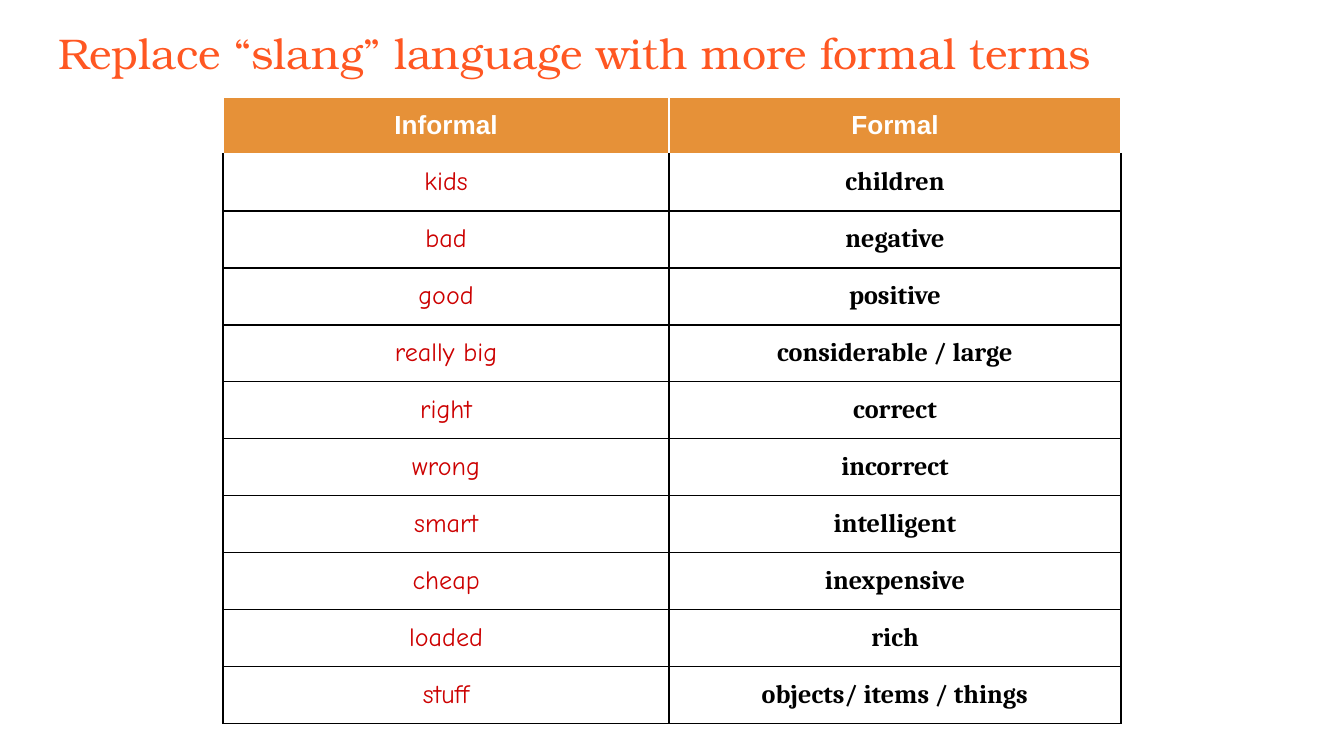
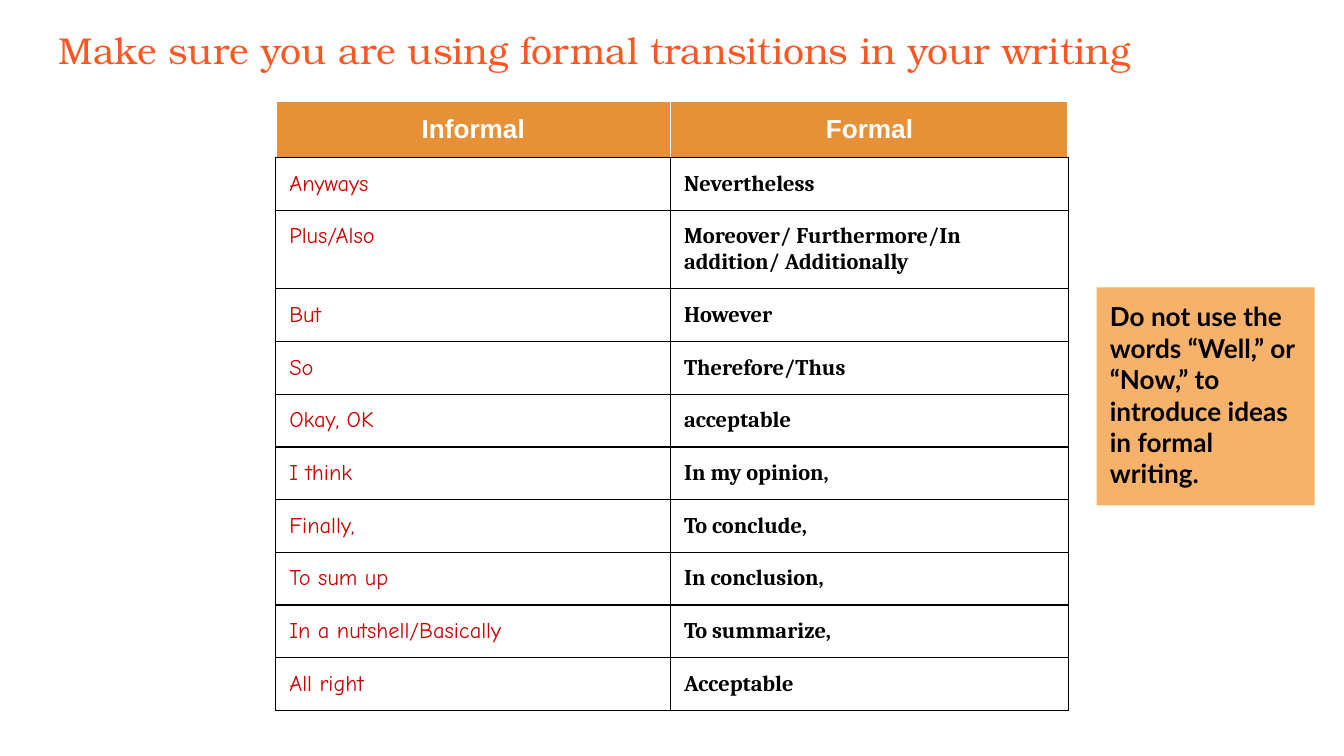
from dataclasses import dataclass

from lxml.etree import SubElement
from pptx import Presentation
from pptx.dml.color import RGBColor
from pptx.enum.shapes import MSO_SHAPE
from pptx.enum.text import MSO_ANCHOR, MSO_AUTO_SIZE, PP_ALIGN
from pptx.oxml.ns import qn
from pptx.util import Pt


@dataclass(frozen=True)
class Theme:
    # Colours
    title: str = "FF5722"
    head: str = "E69138"
    slang: str = "CC0000"
    note: str = "F6B26B"
    black: str = "000000"
    white: str = "FFFFFF"
    # Fonts
    serif: str = "TeX Gyre Bonum"
    sans: str = "Arial"
    hand: str = "Comic Neue"
    book: str = "Cambria"
    memo: str = "Lato"
    # Type sizes and insets
    large: float = 23
    medium: float = 20
    normal: float = 14
    small: float = 12
    pad: float = 7.2
    slim: float = 5


def style(item, values):
    for name, value in values.items():
        setattr(item, name, value)


def paint(fill, tone):
    fill.solid()
    fill.fore_color.rgb = RGBColor.from_string(tone)


class Deck:
    def __init__(self, theme):
        self.theme = theme
        self.show = Presentation()
        style(self.show, {"slide_width": Pt(720), "slide_height": Pt(405)})
        self.slide = None

    def page(self):
        self.slide = self.show.slides.add_slide(self.show.slide_layouts[6])
        paint(self.slide.background.fill, self.theme.white)

    def label(self, frame, text, face, size, tone, bold=False, align=PP_ALIGN.LEFT):
        para = frame.paragraphs[0]
        para.alignment = align
        run = para.add_run()
        run.text = text
        style(run.font, {"name": face, "size": Pt(size), "bold": bold})
        run.font.color.rgb = RGBColor.from_string(tone)

    def setup(self, frame, fit):
        pad = Pt(self.theme.pad)
        style(frame, {
            "word_wrap": True, "auto_size": fit, "vertical_anchor": MSO_ANCHOR.TOP,
            "margin_left": pad, "margin_right": pad,
            "margin_top": pad, "margin_bottom": pad,
        })

    def title(self, text, size, height):
        box = self.slide.shapes.add_textbox(Pt(24.5), Pt(7.2), Pt(671), Pt(height))
        self.setup(box.text_frame, MSO_AUTO_SIZE.NONE)
        self.label(box.text_frame, text, self.theme.serif, size, self.theme.title)

    def note(self, text, left, top, side):
        box = self.slide.shapes.add_shape(
            MSO_SHAPE.RECTANGLE, Pt(left), Pt(top), Pt(side), Pt(side))
        box.shadow.inherit = False
        paint(box.fill, self.theme.note)
        box.line.fill.background()
        self.setup(box.text_frame, MSO_AUTO_SIZE.SHAPE_TO_FIT_TEXT)
        self.label(box.text_frame, text, self.theme.memo, self.theme.normal,
                   self.theme.black, True)

    def edge(self, cell, lines):
        props = cell._tc.get_or_add_tcPr()
        for spot, side in enumerate("LRTB"):
            tone, width = lines[side]
            line = SubElement(props, qn(f"a:ln{side}"), w=str(Pt(width)))
            fill = SubElement(line, qn("a:solidFill"))
            SubElement(fill, qn("a:srgbClr"), val=tone)
            props.insert(spot, line)

    def table(self, pairs, left, top, widths, heights, size, align, side, rule, seam):
        """Two-column word list; seam is the line below the header."""
        look = self.theme
        rows = [("Informal", "Formal"), *pairs]
        grid = self.slide.shapes.add_table(
            len(rows), 2, Pt(left), Pt(top), Pt(sum(widths)), Pt(sum(heights))).table
        style(grid, {"first_row": False, "horz_banding": False})
        for col, width in zip(grid.columns, widths):
            col.width = Pt(width)
        for row, height in zip(grid.rows, heights):
            row.height = Pt(height)

        body = [(look.hand, size, look.slang, False), (look.book, size, look.black, True)]
        for i, words in enumerate(rows):
            for j, word in enumerate(words):
                cell = grid.cell(i, j)
                inset = side if i else look.slim
                style(cell, {
                    "margin_left": Pt(inset), "margin_right": Pt(inset),
                    "margin_top": Pt(look.pad), "margin_bottom": Pt(look.pad),
                    "vertical_anchor": MSO_ANCHOR.TOP,
                })
                if i == 0:
                    paint(cell.fill, look.head)
                    self.label(cell.text_frame, word, look.sans, look.normal,
                               look.white, True, PP_ALIGN.CENTER)
                    lines = dict.fromkeys("LRT", (look.white, 1)) | {"B": seam}
                else:
                    cell.fill.background()
                    self.label(cell.text_frame, word, *body[j], align)
                    lines = dict.fromkeys("LRTB", (look.black, rule))
                    if i == 1:
                        lines["T"] = seam
                self.edge(cell, lines)


SLANG = [
    ("kids", "children"),
    ("bad", "negative"),
    ("good", "positive"),
    ("really big", "considerable / large"),
    ("right", "correct"),
    ("wrong", "incorrect"),
    ("smart", "intelligent"),
    ("cheap", "inexpensive"),
    ("loaded", "rich"),
    ("stuff", "objects/ items / things"),
]

LINKS = [
    ("Anyways", "Nevertheless"),
    ("Plus/Also", "Moreover/ Furthermore/In addition/ Additionally"),
    ("But", "However"),
    ("So", "Therefore/Thus"),
    ("Okay, OK", "acceptable"),
    ("I think", "In my opinion,"),
    ("Finally,", "To conclude,"),
    ("To sum up", "In conclusion,"),
    ("In a nutshell/Basically", "To summarize,"),
    ("All right", "Acceptable"),
]


def main():
    look = Theme()
    deck = Deck(look)

    # Slang and formal terms
    deck.page()
    deck.title("Replace “slang” language with more formal terms", look.large, 45.5)
    deck.table(SLANG, 119.5, 52.2, (239, 242), [29.5] + [30.5] * len(SLANG),
               look.normal, PP_ALIGN.CENTER, look.slim, 1, (look.white, 1))

    # Formal transitions; rows grow to fit their text
    deck.page()
    deck.title("Make sure you are using formal transitions in your writing",
               look.medium, 71.5)
    deck.table(LINKS, 147.8, 54.3, (211.5, 213), [13.7] + [12.2] * len(LINKS),
               look.small, PP_ALIGN.LEFT, look.pad, 0.75, (look.black, 0.75))
    deck.note("Do not use the words “Well,” or “Now,” to introduce ideas in formal writing.",
              587.5, 154, 116.8)

    deck.show.save("out.pptx")


if __name__ == "__main__":
    main()
